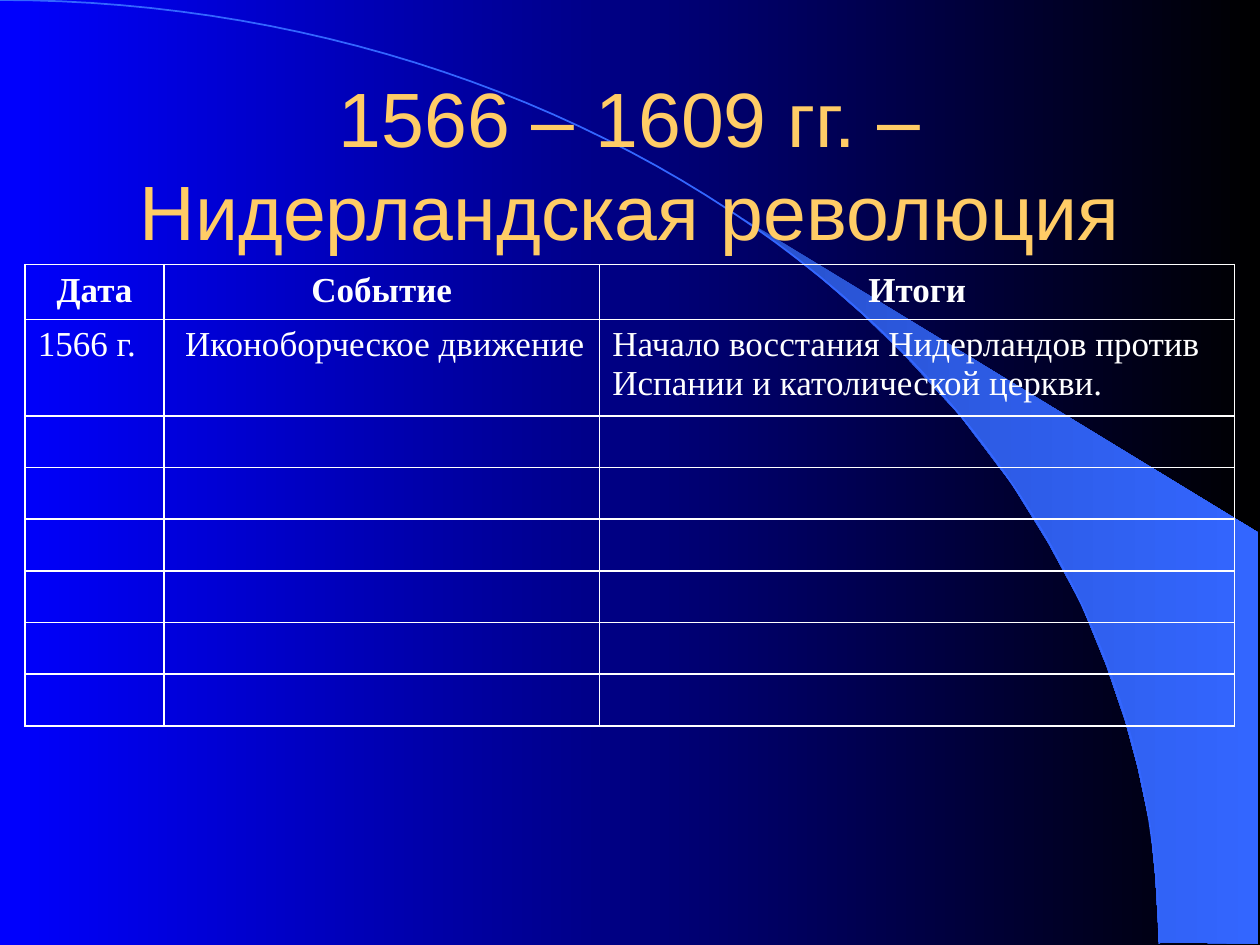
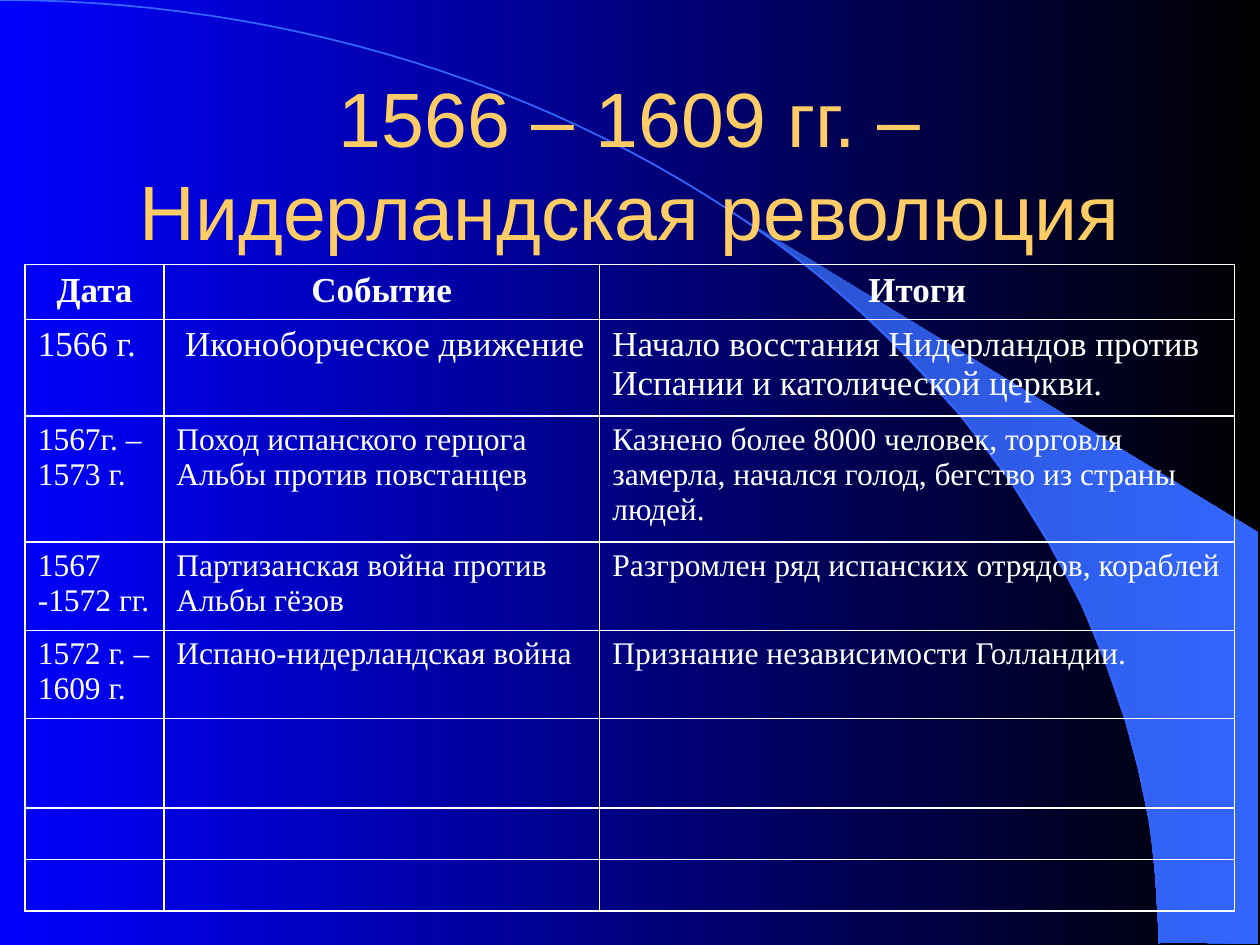
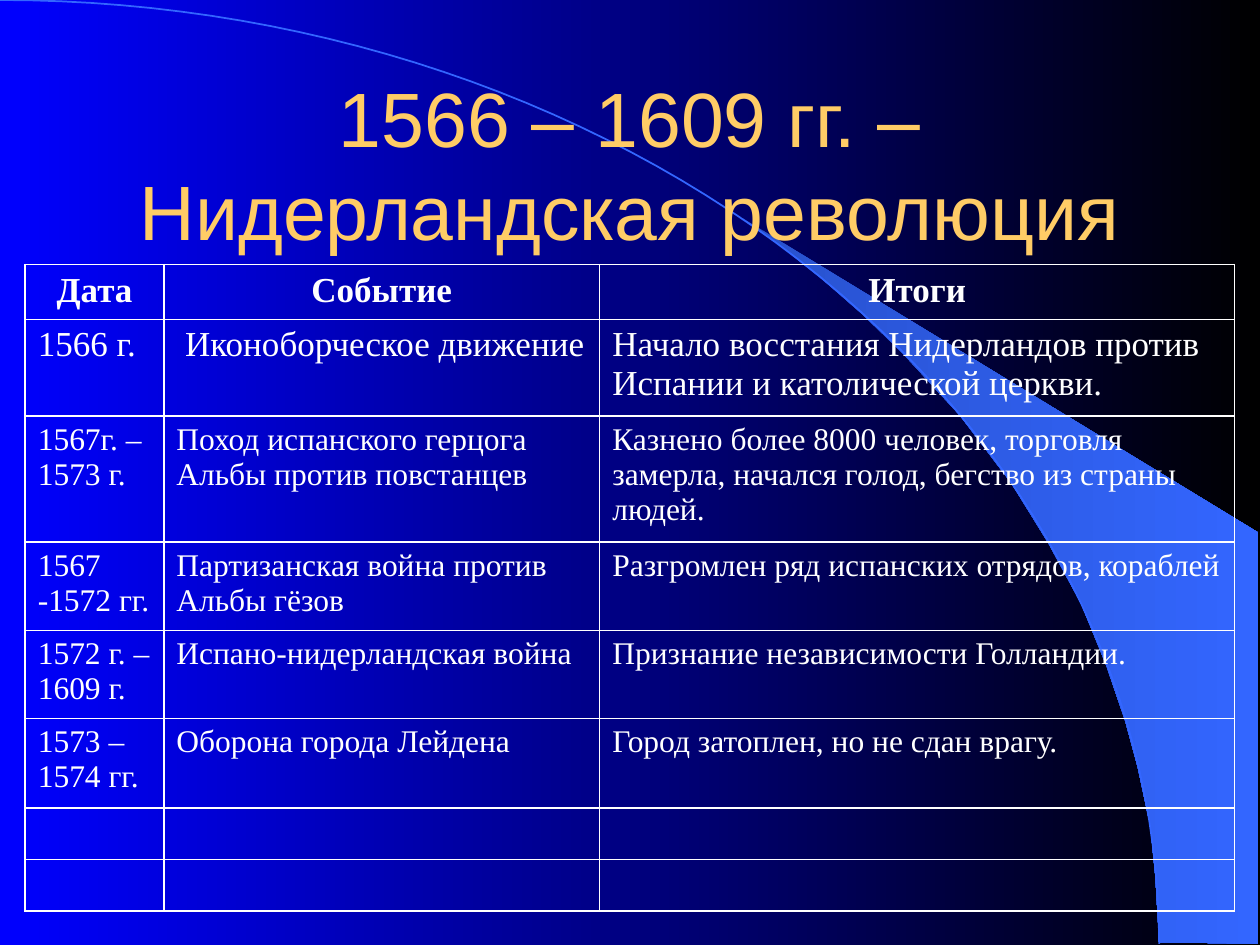
from dataclasses import dataclass
from math import cos, pi, sin

from lxml.etree import SubElement
from pptx import Presentation
from pptx.dml.color import RGBColor
from pptx.enum.text import MSO_ANCHOR, PP_ALIGN
from pptx.oxml.ns import qn
from pptx.util import Inches, Pt


@dataclass(frozen=True)
class Theme:
    background: tuple = ("0000FF", "000000")
    beam: tuple = ("2851CC", "3366FF")
    arc: str = "3366FF"
    title: str = "FFCC66"
    table: str = "FFFFFF"
    title_font: str = "Arial"
    table_font: str = "Times New Roman"
    title_size: int = 44
    large_size: int = 20
    small_size: int = 18
    line_width: int = 1


theme = Theme()

TITLE = "1566 – 1609 гг. – Нидерландская революция"
HEADINGS = ("Дата", "Событие", "Итоги")
EVENTS = [
    ("1566 г.", " Иконоборческое движение",
     "Начало восстания Нидерландов против Испании и католической церкви."),
    ("1567г. – 1573 г.", "Поход испанского герцога Альбы против повстанцев",
     "Казнено более 8000 человек, торговля замерла, начался голод, бегство из страны людей."),
    ("1567 -1572 гг.", "Партизанская война против Альбы гёзов",
     "Разгромлен ряд испанских отрядов, кораблей"),
    ("1572 г. – 1609 г.", "Испано-нидерландская война",
     "Признание независимости Голландии."),
    ("1573 – 1574 гг.", "Оборона города Лейдена",
     "Город затоплен, но не сдан врагу."),
]
EVENTS_SHOWN = (1, 4, 5)  # filled event rows on each slide

ROW_COUNT = 8
ROW_HEIGHT = 0.41
SIEGE_ROW, SIEGE_HEIGHT = 5, 0.71
COLUMN_WIDTHS = (1.1, 3.46, 5.04)

# Light beam outline and the quarter ellipse above it
BEAM = [(9.2, 7.48), (9.99, 7.49), (9.99, 4.23), (5.89, 1.73), (6.24, 1.99),
        (6.53, 2.22), (6.85, 2.5), (7.16, 2.8), (7.62, 3.3), (8.03, 3.84),
        (8.32, 4.31), (8.58, 4.79), (8.78, 5.28), (8.93, 5.72), (9.03, 6.09),
        (9.13, 6.56), (9.17, 6.96)]
ARC_WIDTH, ARC_HEIGHT, ARC_STEPS = 9.2, 7.49, 60
ARC_ANGLES = [step * pi / 2 / ARC_STEPS for step in range(ARC_STEPS + 1)]
ARC = [(ARC_WIDTH * sin(angle), ARC_HEIGHT * (1 - cos(angle))) for angle in ARC_ANGLES]


def set_gradient(fill, colors):
    fill.gradient()
    fill.gradient_angle = 0
    for stop, color in zip(fill.gradient_stops, colors):
        stop.color.rgb = RGBColor.from_string(color)


def add_outline(page, points, close):
    corners = [(Inches(x), Inches(y)) for x, y in points]
    builder = page.shapes.build_freeform(*corners[0])
    builder.add_line_segments(corners[1:], close=close)
    outline = builder.convert_to_shape()
    outline.shadow.inherit = False
    return outline


deck = Presentation()
deck.slide_width, deck.slide_height = Inches(10), Inches(7.5)
set_gradient(deck.slide_master.background.fill, theme.background)

for shown in EVENTS_SHOWN:
    page = deck.slides.add_slide(deck.slide_layouts[6])

    # Backdrop
    beam = add_outline(page, BEAM, close=True)
    set_gradient(beam.fill, theme.beam)
    beam.line.fill.background()
    arc = add_outline(page, ARC, close=False)
    arc.fill.background()
    arc.line.color.rgb = RGBColor.from_string(theme.arc)
    arc.line.width = Pt(theme.line_width)

    # Title
    box = page.shapes.add_textbox(Inches(0.75), Inches(0.67), Inches(8.5), Inches(1.25))
    frame = box.text_frame
    frame.word_wrap = True
    frame.vertical_anchor = MSO_ANCHOR.MIDDLE
    frame.text = TITLE
    para = frame.paragraphs[0]
    para.alignment = PP_ALIGN.CENTER
    span = para.runs[0]
    span.font.name = theme.title_font
    span.font.size = Pt(theme.title_size)
    span.font.color.rgb = RGBColor.from_string(theme.title)

    # Table grid: the siege row is taller once the later events are listed
    heights = [ROW_HEIGHT] * ROW_COUNT
    if shown > 1:
        heights[SIEGE_ROW] = SIEGE_HEIGHT
    table = page.shapes.add_table(
        ROW_COUNT, len(HEADINGS), Inches(0.2), Inches(2.1),
        Inches(sum(COLUMN_WIDTHS)), Inches(sum(heights))).table
    table.first_row = table.horz_banding = False
    for column, width in zip(table.columns, COLUMN_WIDTHS):
        column.width = Inches(width)
    for row, height in zip(table.rows, heights):
        row.height = Inches(height)

    # Cell borders
    for cell in table.iter_cells():
        properties = cell._tc.get_or_add_tcPr()
        for side in ("a:lnL", "a:lnR", "a:lnT", "a:lnB"):
            border = SubElement(properties, qn(side), w=str(Pt(theme.line_width)))
            solid = SubElement(border, qn("a:solidFill"))
            SubElement(solid, qn("a:srgbClr"), val=theme.table)
        cell.fill.background()

    # Cell text
    for row_index, texts in enumerate([HEADINGS] + EVENTS[:shown]):
        for column_index, text in enumerate(texts):
            cell = table.cell(row_index, column_index)
            cell.text_frame.text = text
            para = cell.text_frame.paragraphs[0]
            if row_index == 0:
                para.alignment = PP_ALIGN.CENTER
            font = para.runs[0].font
            font.name = theme.table_font
            font.size = Pt(theme.large_size if row_index < 2 else theme.small_size)
            font.bold = row_index == 0
            font.color.rgb = RGBColor.from_string(theme.table)

deck.save("out.pptx")
